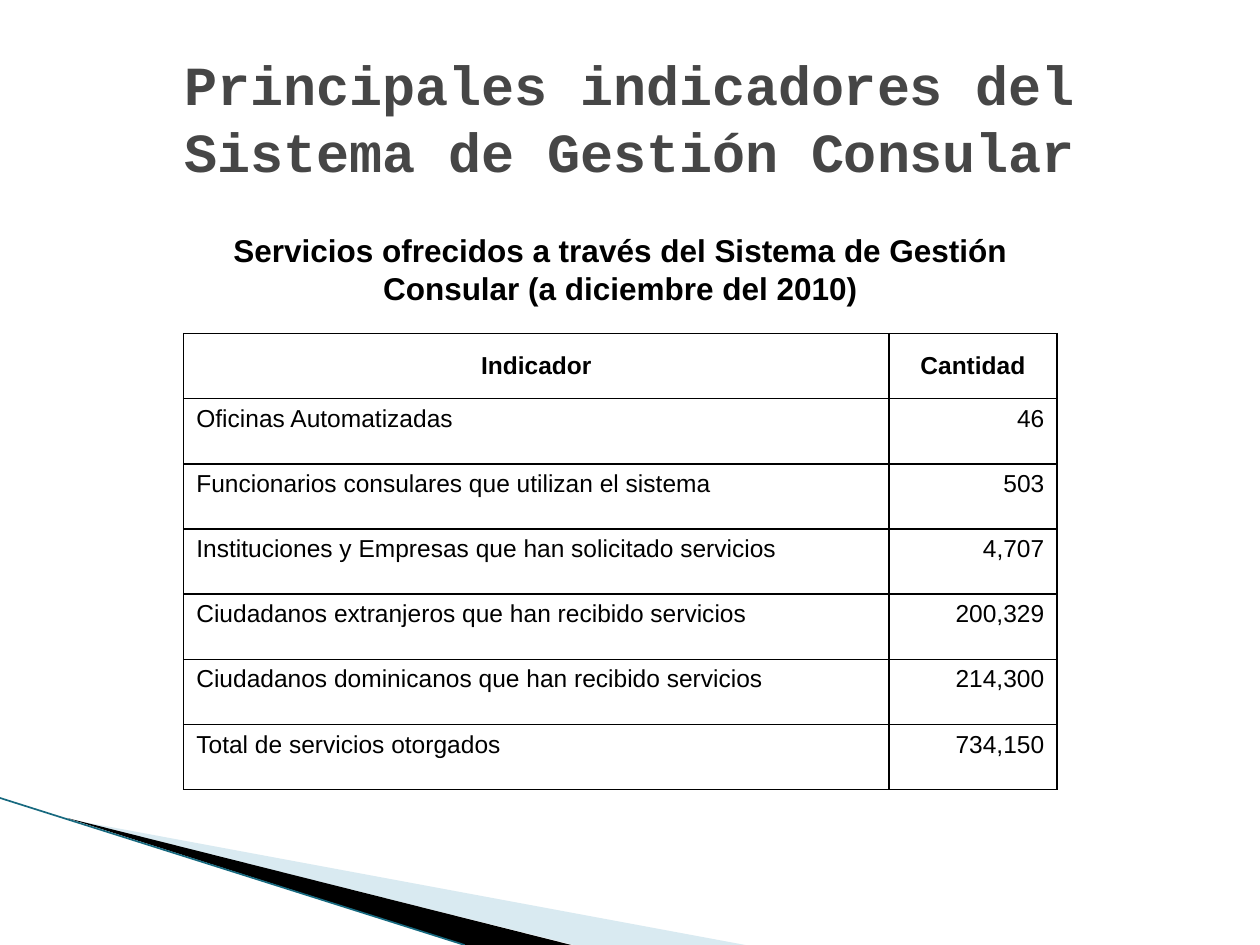
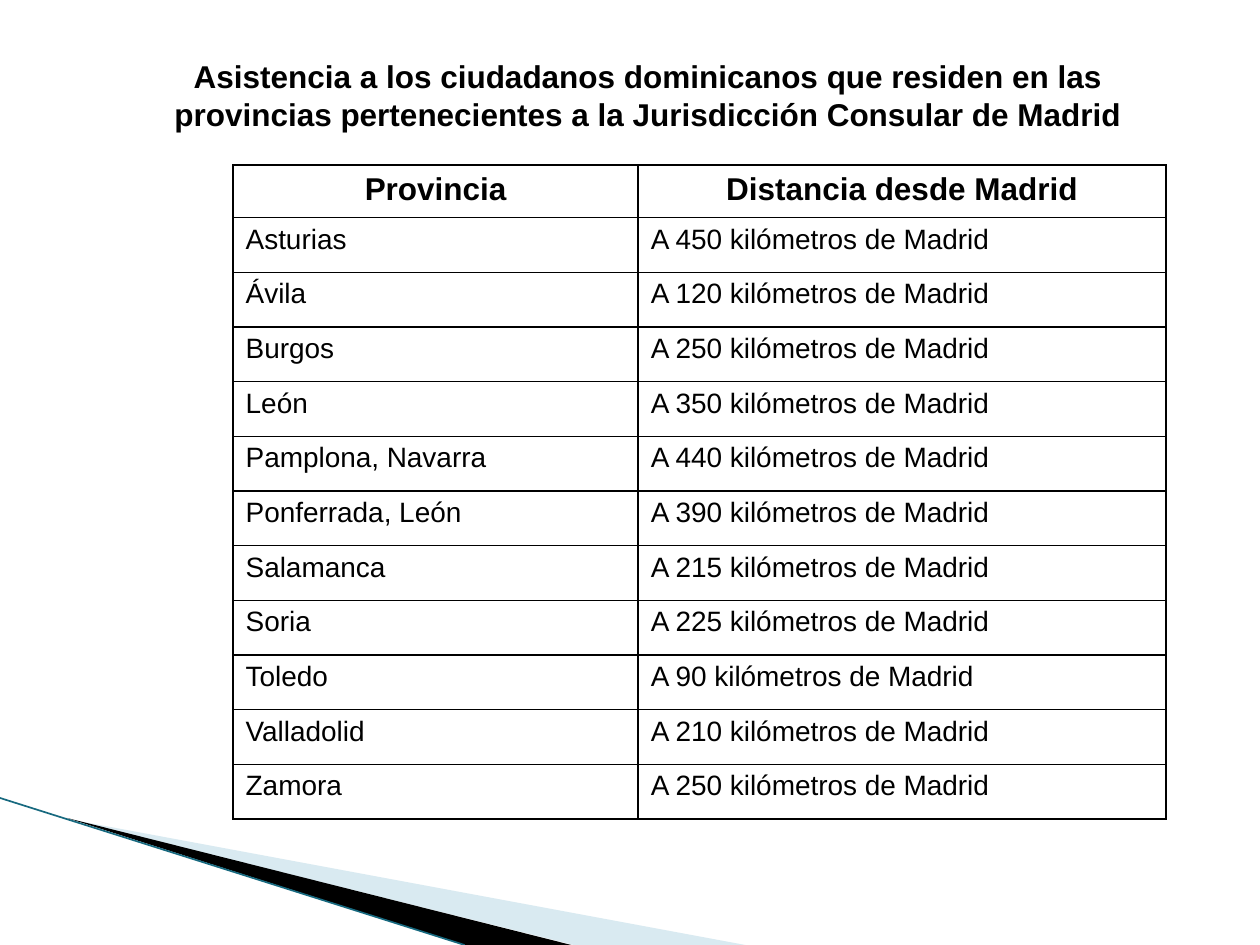
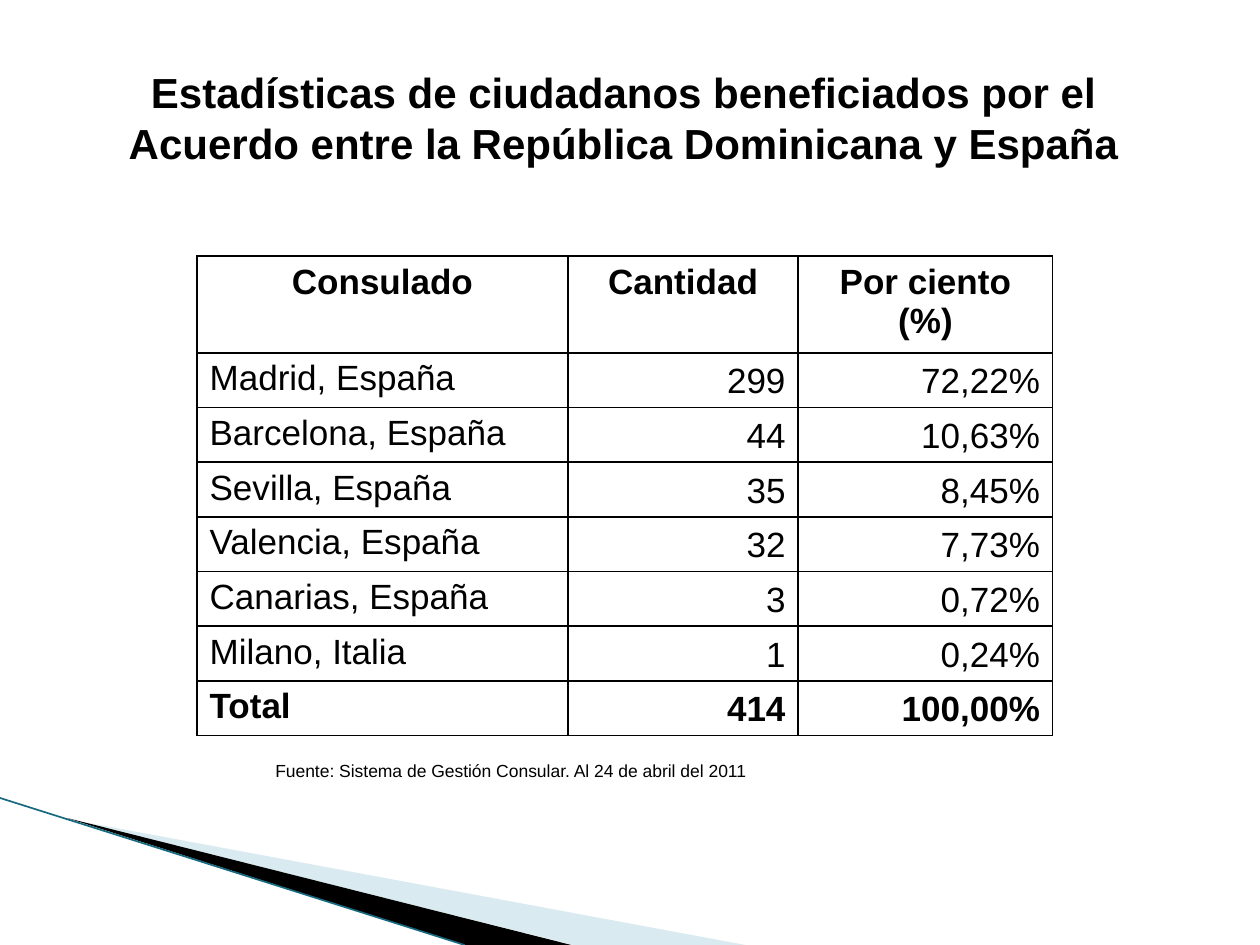
from lxml import etree
from pptx import Presentation
from pptx import util as u
from pptx.dml.color import RGBColor
from pptx.enum import shapes, text
from pptx.oxml.ns import qn

Pt = u.Pt
BLACK, GREY, PALE, TEAL = "000000", "464646", "A0CBDC", "17697F"
MID = text.MSO_ANCHOR.MIDDLE
TOP = text.MSO_ANCHOR.TOP
LOW = text.MSO_ANCHOR.BOTTOM
CENTER = text.PP_ALIGN.CENTER
LEFT = text.PP_ALIGN.LEFT
RIGHT = text.PP_ALIGN.RIGHT
FULL = text.PP_ALIGN.JUSTIFY


def rgb(code):
    return RGBColor.from_string(code)


def write(frame, words, size, bold, align, face="Arial", color=BLACK):
    frame.text = words
    par = frame.paragraphs[0]
    par.alignment = align
    for run in par.runs:
        run.font.name = face
        run.font.size = Pt(size)
        run.font.bold = bold
        run.font.color.rgb = rgb(color)
    return par


# Bands at the foot of every slide: colour, opacity in percent, corners
bands = [
    (PALE, 40, [(39.6, 468.2), (426, 540), (328, 540)]),
    (BLACK, 100, [(38.2, 467.4), (326.5, 540), (265.5, 540)]),
]

# Text boxes: words, place, size, bold, alignment, font, colour
boxes = [
    [("Principales indicadores del Sistema de Gestión Consular",
      (36, 21.6, 648, 90), 31.5, True, CENTER, "Courier New", GREY),
     ("Servicios ofrecidos a través del Sistema de Gestión Consular "
      "(a diciembre del 2010)",
      (105, 128.2, 499, 50.4), 18, True, CENTER, "Arial", BLACK)],
    [("Asistencia a los ciudadanos dominicanos que residen en las "
      "provincias pertenecientes a la Jurisdicción Consular de Madrid",
      (65, 29, 610.5, 50.4), 18, True, CENTER, "Arial", BLACK)],
    [("Estadísticas de ciudadanos beneficiados por el Acuerdo entre la "
      "República Dominicana y España",
      (44.6, 34, 623.5, 65.4), 24, True, CENTER, "Arial", BLACK),
     ("Fuente: Sistema de Gestión Consular. Al 24 de abril del 2011",
      (150.2, 430.8, 284.4, 19.4), 10, False, LEFT, "Arial", BLACK)],
]

# Table contents
services = [
    ("Indicador", "Cantidad"),
    ("Oficinas Automatizadas", "46"),
    ("Funcionarios consulares que utilizan el sistema", "503"),
    ("Instituciones y Empresas que han solicitado servicios", "4,707"),
    ("Ciudadanos extranjeros que han recibido servicios", "200,329"),
    ("Ciudadanos dominicanos que han recibido servicios", "214,300"),
    ("Total de servicios otorgados", "734,150"),
]
towns = [
    ("Asturias", 450), ("Ávila", 120), ("Burgos", 250), ("León", 350),
    ("Pamplona, Navarra", 440), ("Ponferrada, León", 390),
    ("Salamanca", 215), ("Soria", 225), ("Toledo", 90),
    ("Valladolid", 210), ("Zamora", 250),
]
routes = [("Provincia", "Distancia desde Madrid")]
routes += [(town, f"A {far} kilómetros de Madrid") for town, far in towns]
people = [
    ("Consulado", "Cantidad", "Por ciento (%)"),
    ("Madrid, España", "299", "72,22%"),
    ("Barcelona, España", "44", "10,63%"),
    ("Sevilla, España", "35", "8,45%"),
    ("Valencia, España", "32", "7,73%"),
    ("Canarias, España", "3", "0,72%"),
    ("Milano, Italia", "1", "0,24%"),
    ("Total", "414", "100,00%"),
]

# Table layouts: rows, corner, column widths, head and row heights,
# head and body sizes, head anchor, value alignment and anchor
grids = [
    (services, (105, 190.6), (403, 96), 37.2, 37.25, 14, 14, MID, RIGHT, TOP),
    (routes, (133.2, 94.4), (231.5, 301.5), 30, 31.25, 18, 16, TOP, FULL, TOP),
    (people, (112.6, 146.4), (212, 131.5, 145.5), 54.9, 31.25, 20, 20,
     TOP, RIGHT, LOW),
]

deck = Presentation()
deck.slide_width, deck.slide_height = Pt(720), Pt(540)

for texts, grid in zip(boxes, grids):
    slide = deck.slides.add_slide(deck.slide_layouts[6])

    # Bands
    for color, alpha, points in bands:
        spots = [(Pt(x), Pt(y)) for x, y in points]
        pen = slide.shapes.build_freeform(*spots[0])
        pen.add_line_segments(spots[1:], close=True)
        band = pen.convert_to_shape()
        band.shadow.inherit = False
        band.line.fill.background()
        band.fill.solid()
        band.fill.fore_color.rgb = rgb(color)
        if alpha < 100:
            tint = band.fill._xPr.find(".//" + qn("a:srgbClr"))
            etree.SubElement(tint, qn("a:alpha"), val=str(alpha * 1000))
    edge = slide.shapes.add_connector(
        shapes.MSO_CONNECTOR.STRAIGHT, Pt(0), Pt(456), Pt(265.5), Pt(540))
    edge.line.color.rgb = rgb(TEAL)
    edge.line.width = Pt(0.95)
    etree.SubElement(edge._element.spPr, qn("a:effectLst"))

    # Title and notes
    for words, place, size, bold, align, face, color in texts:
        box = slide.shapes.add_textbox(*[Pt(n) for n in place])
        frame = box.text_frame
        frame.word_wrap = True
        frame.vertical_anchor = MID
        par = write(frame, words, size, bold, align, face, color)
        par.line_spacing = Pt(round(size * 1.21, 1))

    # Table
    rows, corner, widths, top, step, big, small, first, side, hold = grid
    high = top + step * (len(rows) - 1)
    table = slide.shapes.add_table(
        len(rows), len(widths), Pt(corner[0]), Pt(corner[1]),
        Pt(sum(widths)), Pt(high)).table
    table.first_row = table.horz_banding = False
    for col, wide in zip(table.columns, widths):
        col.width = Pt(wide)
    for r, row in enumerate(rows):
        head = r == 0
        table.rows[r].height = Pt(top if head else step)
        for c, words in enumerate(row):
            cell = table.cell(r, c)
            align = CENTER if head else side if c else FULL
            write(cell.text_frame, words, big if head else small,
                  head or row[0] == "Total", align)
            cell.vertical_anchor = first if head else hold if c else TOP
            props = cell._tc.get_or_add_tcPr()
            for tag in ("a:lnL", "a:lnR", "a:lnT", "a:lnB"):
                rule = etree.SubElement(props, qn(tag), w=str(Pt(1)))
                fill = etree.SubElement(rule, qn("a:solidFill"))
                etree.SubElement(fill, qn("a:srgbClr"), val=BLACK)
            cell.fill.background()

deck.save("out.pptx")
